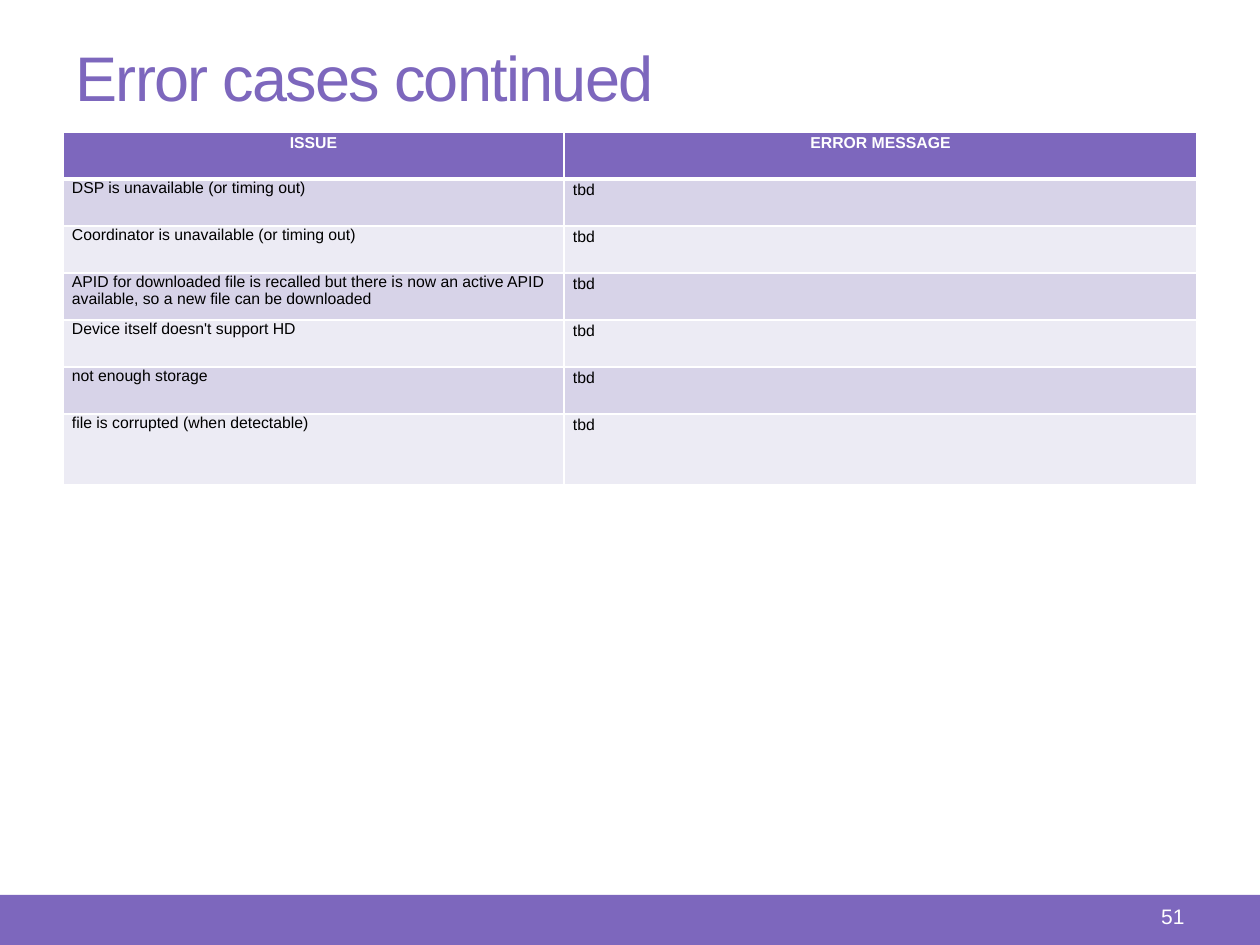
from dataclasses import dataclass

from lxml.etree import SubElement
from pptx import Presentation
from pptx.dml.color import RGBColor as Rgb
from pptx.enum.shapes import MSO_SHAPE as Shape
from pptx.enum.text import MSO_ANCHOR as Anchor, PP_ALIGN as Align
from pptx.oxml.ns import qn
from pptx.util import Pt

PX = 914400 // 126


@dataclass(frozen=True)
class Theme:
    font: str = "Arial"
    main: str = "7D67BD"
    dark: str = "D7D3E8"
    pale: str = "ECEBF4"
    ink: str = "000000"
    white: str = "FFFFFF"
    title: int = 36
    page: int = 12
    cell: int = 9


look = Theme()


def write(frame, text, size, color, bold=False, align=Align.LEFT, lead=1.0, track=0):
    frame.word_wrap = True
    para = frame.paragraphs[0]
    para.alignment = align
    para.line_spacing = lead
    run = para.add_run()
    run.text = text
    font = run.font
    font.name = look.font
    font.size = Pt(size)
    font.bold = bold
    font.color.rgb = Rgb.from_string(color)
    if track:
        run._r.get_or_add_rPr().set("spc", str(track))


def edge(cell, side, width):
    line = SubElement(cell._tc.get_or_add_tcPr(), qn("a:ln" + side), w=str(Pt(width)))
    fill = SubElement(line, qn("a:solidFill"))
    SubElement(fill, qn("a:srgbClr"), val=look.white)


deck = Presentation()
deck.slide_width = 1260 * PX
deck.slide_height = 945 * PX
slide = deck.slides.add_slide(deck.slide_layouts[5])
shapes = slide.shapes

# Footer bar
bar = shapes.add_shape(Shape.RECTANGLE, 0, 895 * PX, 1260 * PX, 50 * PX)
bar.shadow.inherit = False
bar.fill.solid()
bar.fill.fore_color.rgb = Rgb.from_string(look.main)
bar.line.fill.background()

# Title
title = shapes.title
title.left, title.top = 63 * PX, 32 * PX
title.width, title.height = 1134 * PX, 89 * PX
title.text_frame.vertical_anchor = Anchor.MIDDLE
write(title.text_frame, "Error cases continued", look.title, look.main, track=-100)

# Page number
page = shapes.add_textbox(1050 * PX, 897 * PX, 147 * PX, 45 * PX)
write(page.text_frame, "51", look.page, look.white, align=Align.RIGHT)

# Error table
heads = ["ISSUE", "ERROR MESSAGE"]
issues = [
    "DSP is unavailable (or timing out)",
    "Coordinator is unavailable (or timing out)",
    "APID for downloaded file is recalled but there is now an active APID "
    "available, so a new file can be downloaded",
    "Device itself doesn't support HD",
    "not enough storage",
    "file is corrupted (when detectable)",
]
rows = [heads] + [[issue, "tbd"] for issue in issues]
wide = [501, 633]
high = [47] * len(issues) + [71]

grid = shapes.add_table(
    len(rows), len(wide), 63 * PX, 132 * PX, sum(wide) * PX, sum(high) * PX
).table
grid.horz_banding = False
for col, width in zip(grid.columns, wide):
    col.width = width * PX

for r, row in enumerate(rows):
    grid.rows[r].height = high[r] * PX
    head = r == 0
    band = look.main if head else look.dark if r % 2 else look.pale
    for c, text in enumerate(row):
        cell = grid.cell(r, c)
        cell.margin_left = cell.margin_right = 9 * PX
        cell.margin_top = cell.margin_bottom = 0
        for side in "LRTB":
            thick = (r, side) in ((0, "B"), (1, "T"))
            edge(cell, side, 3 if thick else 1)
        cell.fill.solid()
        cell.fill.fore_color.rgb = Rgb.from_string(band)
        write(
            cell.text_frame, text, look.cell,
            look.white if head else look.ink,
            bold=head,
            align=Align.CENTER if head else Align.LEFT,
            lead=1.15 if head or c else 1.0,
        )

deck.save("out.pptx")
